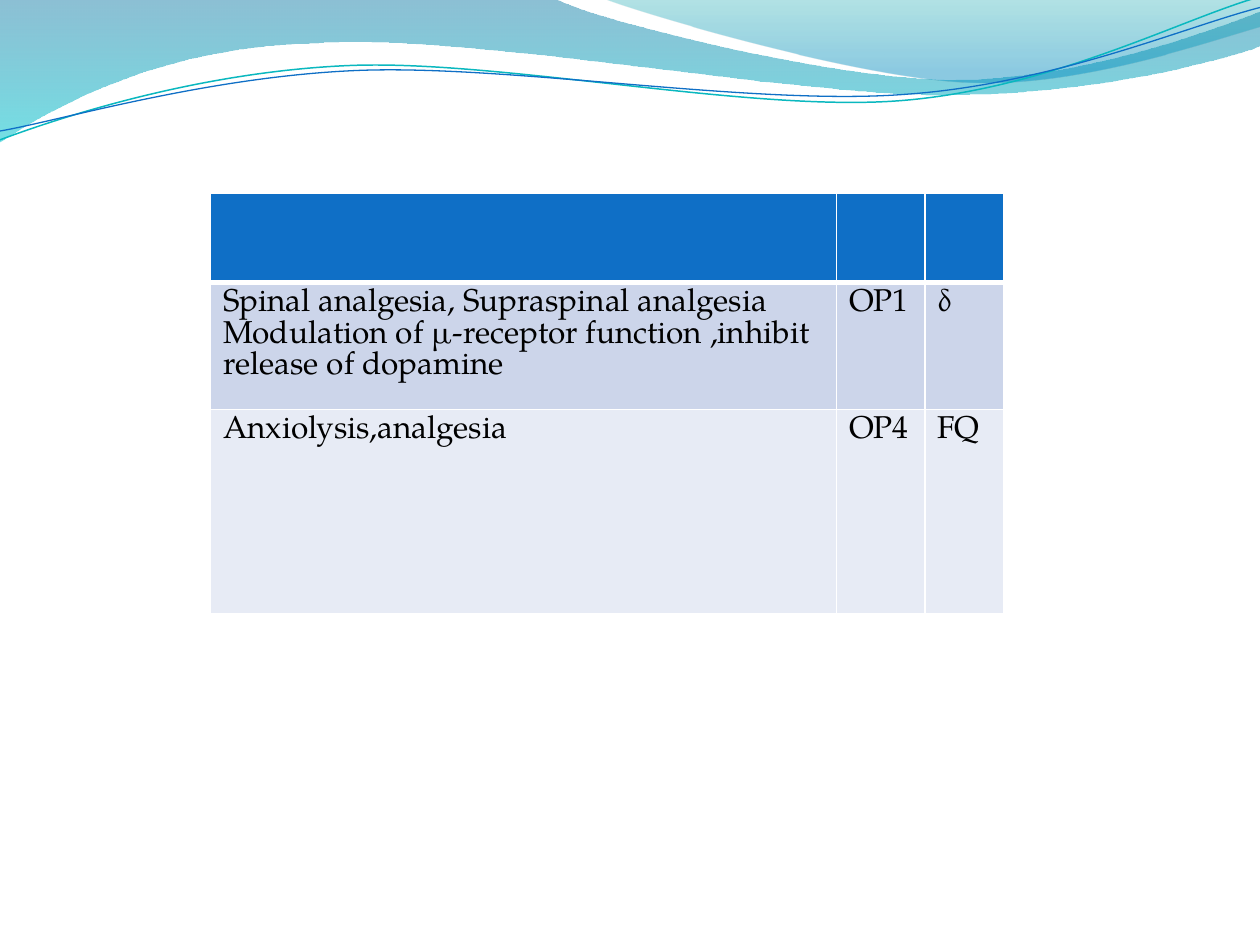
from math import cos, radians, sin

from lxml.etree import SubElement
from pptx import Presentation
from pptx.dml.color import RGBColor
from pptx.oxml.ns import qn
from pptx.util import Inches, Pt

COLORS = {
    "header": "0F6FC6", "odd row": "CCD5EA", "even row": "E7EBF5",
    "border": "FFFFFF", "text": "000000", "teal line": "0AB8BF", "blue line": "0F6FC6",
    "deep blue": "0074A1", "aqua": "00C6CF", "green": "00A1A9", "sky": "008BBF",
}
FONT = "TeX Gyre Pagella"

# Each outline is a start point and segments: one point for a line, three for a Bézier curve.
# Gradient stops are (position, colour, opacity), all but the colour in percent.
WAVES = [
    {"start": (0, 0),
     "segments": [[(4.4, -0.01)],
                  [(4.76, 0.17), (6.64, 0.63), (7.58, 0.63)],
                  [(8.53, 0.63), (9.58, 0.26), (10, 0.09)],
                  [(10.01, 0.36)],
                  [(9.83, 0.44), (8.7, 0.76), (7.46, 0.75)],
                  [(6.22, 0.75), (3.82, 0.28), (2.57, 0.34)],
                  [(1.29, 0.36), (0.46, 0.83), (-0.01, 1.13)]],
     "stops": [(0, "deep blue", 45), (100, "aqua", 55)]},
    {"start": (4.79, -0.01),
     "segments": [[(5.09, 0.11), (6.82, 0.62), (7.69, 0.65)],
                  [(8.56, 0.69), (9.61, 0.32), (10, 0.21)],
                  [(10, 0)]],
     "stops": [(0, "green", 30), (80, "sky", 45)]},
]
LINE_ROTATION = -2.7
LINES = [
    {"start": (0, 1.11), "center": (4.99, 0.58), "color": "teal line", "width": 0.85,
     "segments": [[(0.48, 0.93), (1.58, 0.57), (2.77, 0.52)],
                  [(3.95, 0.47), (5.93, 0.89), (7.13, 0.8)],
                  [(8.33, 0.71), (9.38, 0.15), (9.98, -0.02)]]},
    {"start": (0, 1.04), "center": (5, 0.59), "color": "blue line", "width": 0.75,
     "segments": [[(0.47, 0.96), (1.64, 0.61), (2.83, 0.56)],
                  [(4.03, 0.51), (5.97, 0.84), (7.17, 0.75)],
                  [(8.36, 0.67), (9.41, 0.21), (10, 0.06)]]},
]

TABLE_LEFT, TABLE_TOP = 1.67, 1.53
COLUMN_WIDTHS = [4.97, 0.7, 0.63]
ROW_HEIGHTS = [0.71, 1.01, 1.62]
ROW_FILLS = ["header", "odd row", "even row"]
ROWS = [
    [[], [], []],
    [["Spinal analgesia, Supraspinal analgesia",
      "Modulation of µ-receptor function ,inhibit release of dopamine"], ["OP1"], ["δ"]],
    [["Anxiolysis,analgesia"], ["OP4"], ["FQ"]],
]


def rgb(name):
    return RGBColor.from_string(COLORS[name])


def turn(point, center, degrees):
    dx, dy = point[0] - center[0], point[1] - center[1]
    c, s = cos(radians(degrees)), sin(radians(degrees))
    return center[0] + dx * c - dy * s, center[1] + dx * s + dy * c


def add_outline(slide, start, segments, close):
    """Build a freeform through all points, then make each three-point segment a curve."""
    vertices = [(Inches(x), Inches(y)) for segment in segments for x, y in segment]
    builder = slide.shapes.build_freeform(Inches(start[0]), Inches(start[1]))
    builder.add_line_segments(vertices, close=close)
    shape = builder.convert_to_shape()
    shape.shadow.inherit = False
    straight = iter(list(shape.element.spPr.iter(qn("a:lnTo"))))
    for segment in segments:
        steps = [next(straight) for _ in segment]
        if len(steps) == 3:
            curve = steps[0].makeelement(qn("a:cubicBezTo"), {})
            steps[0].addprevious(curve)
            for step in steps:
                curve.append(step[0])
                step.getparent().remove(step)
    return shape


def add_wave(slide, wave):
    shape = add_outline(slide, wave["start"], wave["segments"], True)
    shape.line.fill.background()
    shape.fill.gradient()
    shape.fill.gradient_angle = 270
    for stop, (position, color, _) in zip(shape.fill.gradient_stops, wave["stops"]):
        stop.position = position / 100
        stop.color.rgb = rgb(color)
    colors = list(shape.element.spPr.iter(qn("a:srgbClr")))
    for element, (_, _, opacity) in zip(colors, wave["stops"]):
        SubElement(element, qn("a:alpha")).set("val", str(opacity * 1000))


def add_line(slide, line):
    """Draw the line level, then rotate it so that it meets its points."""
    def level(point):
        return turn(point, line["center"], -LINE_ROTATION)

    segments = [[level(point) for point in segment] for segment in line["segments"]]
    shape = add_outline(slide, level(line["start"]), segments, False)
    shape.rotation = LINE_ROTATION
    shape.fill.background()
    shape.line.color.rgb = rgb(line["color"])
    shape.line.width = Pt(line["width"])


def set_borders(cell, bottom_width):
    properties = cell._tc.get_or_add_tcPr()
    widths = {"a:lnL": 1, "a:lnR": 1, "a:lnT": 1, "a:lnB": bottom_width}
    for index, (tag, width) in enumerate(widths.items()):
        border = properties.makeelement(qn(tag), {"w": str(Pt(width))})
        fill = SubElement(border, qn("a:solidFill"))
        SubElement(fill, qn("a:srgbClr")).set("val", COLORS["border"])
        properties.insert(index, border)


def fill_cell(cell, texts, fill, bottom_width):
    cell.fill.solid()
    cell.fill.fore_color.rgb = rgb(fill)
    set_borders(cell, bottom_width)
    frame = cell.text_frame
    for index, text in enumerate(texts):
        paragraph = frame.paragraphs[0] if index == 0 else frame.add_paragraph()
        run = paragraph.add_run()
        run.text = text
        run.font.size = Pt(18)
        run.font.name = FONT
        run.font.color.rgb = rgb("text")


def add_receptor_table(slide):
    table = slide.shapes.add_table(
        len(ROWS), len(COLUMN_WIDTHS), Inches(TABLE_LEFT), Inches(TABLE_TOP),
        Inches(sum(COLUMN_WIDTHS)), Inches(sum(ROW_HEIGHTS))).table
    for column, width in zip(table.columns, COLUMN_WIDTHS):
        column.width = Inches(width)
    for index, (row, height) in enumerate(zip(table.rows, ROW_HEIGHTS)):
        row.height = Inches(height)
        for cell, texts in zip(row.cells, ROWS[index]):
            fill_cell(cell, texts, ROW_FILLS[index], 3 if index == 0 else 1)


def main():
    presentation = Presentation()
    presentation.slide_width, presentation.slide_height = Inches(10), Inches(7.5)
    slide = presentation.slides.add_slide(presentation.slide_layouts[6])
    for wave in WAVES:
        add_wave(slide, wave)
    for line in LINES:
        add_line(slide, line)
    add_receptor_table(slide)
    presentation.save("out.pptx")


if __name__ == "__main__":
    main()
